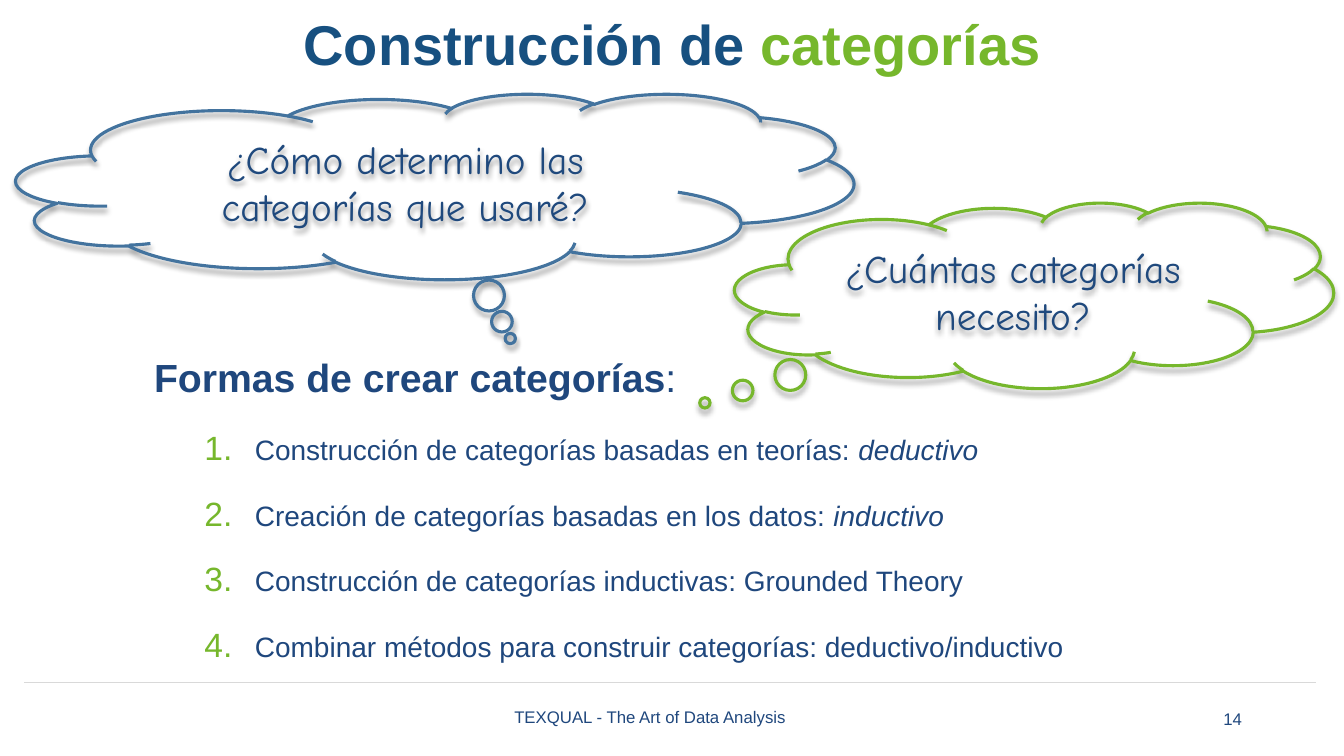
import pptx
import pptx.util
import pptx.dml.color
import pptx.enum.shapes
import pptx.enum.text
import pptx.oxml
import pptx.oxml.ns
import lxml.etree

Pt = pptx.util.Pt
Align = pptx.enum.text.PP_ALIGN
Anchor = pptx.enum.text.MSO_ANCHOR
THEME = {
    "navy": "1F477D", "cloud_text": "1F497D", "title": "175080",
    "green": "76B72C", "blue": "43739E", "rule": "D9D9D9",
    "title_size": 40, "heading_size": 28, "item_size": 20, "footer_size": 12,
    "font": "Arial", "cloud_font": "Comic Neue",
}
DRAWING = pptx.oxml.ns.nsdecls("a")
SHADOW = (
    f'<a:outerShdw {DRAWING} blurRad="{Pt(4)}" dist="{Pt(3)}" dir="5400000" rotWithShape="0">'
    '<a:srgbClr val="000000"><a:alpha val="40000"/></a:srgbClr></a:outerShdw>'
)


class SlideBuilder:
    def __init__(self, slide, theme):
        self.slide = slide
        self.theme = theme

    def color(self, name):
        return pptx.dml.color.RGBColor.from_string(self.theme[name])

    def apply(self, target, values):
        for name, value in values.items():
            setattr(target, name, value)

    def frame(self, shape, anchor, inset=None):
        values = {"word_wrap": True, "vertical_anchor": anchor}
        if inset is not None:
            for side in ("left", "top", "right", "bottom"):
                values[f"margin_{side}"] = Pt(inset)
        self.apply(shape.text_frame, values)
        return shape.text_frame

    def add_runs(self, paragraph, runs, size, font="font", **layout):
        self.apply(paragraph, layout)
        for text, color, emphasis in runs:
            run = paragraph.add_run()
            run.text = text
            self.apply(run.font, {"name": self.theme[font], "size": Pt(self.theme[size]),
                                  "bold": False, "italic": False, **emphasis})
            run.font.color.rgb = self.color(color)

    def title(self, box, runs):
        title = self.slide.shapes.title
        self.apply(title, dict(zip(("left", "top", "width", "height"), map(Pt, box))))
        frame = self.frame(title, Anchor.MIDDLE)
        frame.auto_size = pptx.enum.text.MSO_AUTO_SIZE.NONE
        self.add_runs(frame.paragraphs[0], runs, "title_size", alignment=Align.CENTER,
                      line_spacing=0.9, space_before=Pt(0), space_after=Pt(3))

    def label(self, box, text, alignment):
        frame = self.frame(self.slide.shapes.add_textbox(*map(Pt, box)), Anchor.MIDDLE)
        self.add_runs(frame.paragraphs[0], [(text, "navy", {})], "footer_size",
                      alignment=alignment)

    def rule(self, left, right, y):
        rule = self.slide.shapes.add_connector(
            pptx.enum.shapes.MSO_CONNECTOR.STRAIGHT, Pt(left), Pt(y), Pt(right), Pt(y))
        rule.line.color.rgb = self.color("rule")
        rule.line.width = Pt(0.5)
        lxml.etree.SubElement(rule._element.spPr, pptx.oxml.ns.qn("a:effectLst"))

    def number(self, paragraph):
        properties = paragraph._p.get_or_add_pPr()
        properties.set("marL", str(Pt(72)))
        properties.set("indent", str(Pt(-36)))
        for bullet in (
            f'<a:buClr {DRAWING}><a:srgbClr val="{self.theme["green"]}"/></a:buClr>',
            f'<a:buSzPct {DRAWING} val="120000"/>',
            f'<a:buFont {DRAWING} typeface="+mj-lt"/>',
            f'<a:buAutoNum {DRAWING} type="arabicPeriod"/>',
        ):
            properties.append(pptx.oxml.parse_xml(bullet))

    def numbered_list(self, box, heading, items):
        frame = self.frame(self.slide.shapes.add_textbox(*map(Pt, box)), Anchor.BOTTOM)
        self.add_runs(frame.paragraphs[0], heading, "heading_size",
                      line_spacing=1.5, space_after=Pt(6))
        for text, method in items:
            item = frame.add_paragraph()
            self.number(item)
            runs = [(text, "navy", {})]
            if method:
                runs.append((method, "navy", {"italic": True}))
            self.add_runs(item, runs, "item_size", level=1, line_spacing=1.5,
                          space_before=Pt(5), space_after=Pt(6))

    def thought(self, box, tail, outline, question, inset=None):
        cloud = self.slide.shapes.add_shape(
            pptx.enum.shapes.MSO_SHAPE.CLOUD_CALLOUT, *map(Pt, box))
        for index, offset in enumerate(tail):
            cloud.adjustments[index] = offset
        cloud.fill.background()
        cloud.line.color.rgb = self.color(outline)
        cloud.line.width = Pt(2.25)
        cloud.shadow.inherit = False
        effects = cloud._element.spPr.find(pptx.oxml.ns.qn("a:effectLst"))
        effects.append(pptx.oxml.parse_xml(SHADOW))
        frame = self.frame(cloud, Anchor.MIDDLE, inset)
        self.add_runs(frame.paragraphs[0], [(question, "cloud_text", {})], "heading_size",
                      "cloud_font", alignment=Align.CENTER)


def main():
    presentation = pptx.Presentation()
    presentation.slide_width = Pt(960)
    presentation.slide_height = Pt(540)
    builder = SlideBuilder(
        presentation.slides.add_slide(presentation.slide_layouts[5]), THEME)

    builder.rule(17.28, 940.32, 487.44)
    builder.label((678.24, 498.96, 216, 28.8), "14", Align.RIGHT)
    builder.numbered_list(
        (102.96, 185.76, 753.84, 291.6),
        [("Formas de crear categorías", "navy", {"bold": True}), (":", "navy", {})],
        [
            ("Construcción de categorías basadas en teorías: ", "deductivo"),
            ("Creación de categorías basadas en los datos: ", "inductivo"),
            ("Construcción de categorías inductivas: Grounded Theory", ""),
            ("Combinar métodos para construir categorías: deductivo/inductivo", ""),
        ])
    builder.title((0, 0, 960, 66.96), [
        ("Construcción de ", "title", {"bold": True}),
        ("categorías", "green", {"bold": True}),
    ])
    builder.label((302.4, 497.52, 324, 28.8),
                  "TEXQUAL - The Art of Data Analysis", Align.CENTER)
    builder.thought((524.88, 144.72, 427.68, 132.48), (-0.55, 0.58), "green",
                    "¿Cuántas categorías necesito?")
    builder.thought((11.52, 66.96, 598.32, 132.48), (0.09, 0.82), "blue",
                    "¿Cómo determino las categorías que usaré?", 3)
    presentation.save("out.pptx")


if __name__ == "__main__":
    main()
